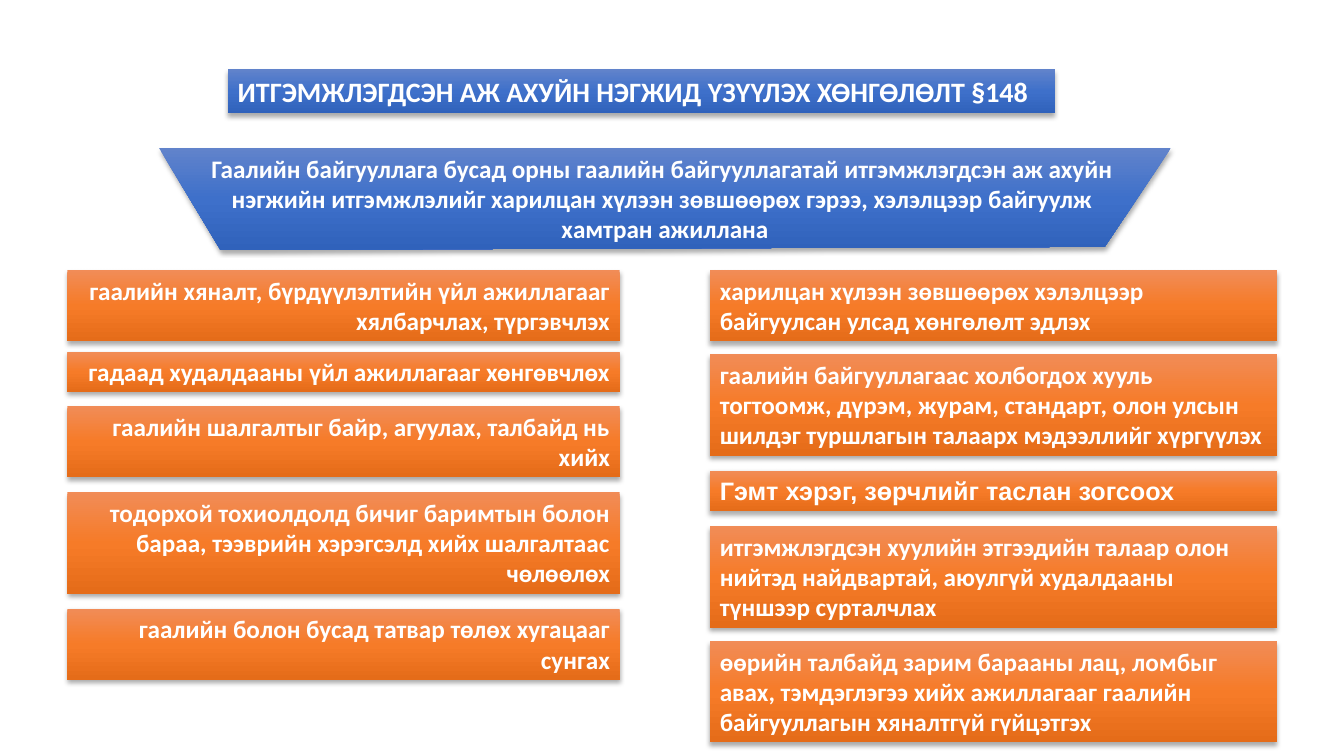
from copy import deepcopy

from lxml import etree
from pptx import Presentation
from pptx.dml.color import RGBColor
from pptx.enum.shapes import MSO_SHAPE
from pptx.enum.text import MSO_ANCHOR, MSO_AUTO_SIZE, PP_ALIGN
from pptx.oxml.ns import qn
from pptx.util import Cm, Pt

RECT = MSO_SHAPE.RECTANGLE
LEFT, RIGHT, MID = PP_ALIGN.LEFT, PP_ALIGN.RIGHT, PP_ALIGN.CENTER
TOP = MSO_ANCHOR.TOP
GROW = MSO_AUTO_SIZE.SHAPE_TO_FIT_TEXT

COLORS = {
    "blue": ["6183CB", "3E70CA", "3062BB"],
    "orange": ["F18C57", "F67B28", "E56C19"],
    "text": "FFFFFF",
    "shadow": "000000",
}

TITLE = "ИТГЭМЖЛЭГДСЭН АЖ АХУЙН НЭГЖИД ҮЗҮҮЛЭХ ХӨНГӨЛӨЛТ §148"
INTRO = "\n".join([
    "Гаалийн байгууллага бусад орны гаалийн байгууллагатай итгэмжлэгдсэн аж ахуйн ",
    "нэгжийн итгэмжлэлийг харилцан хүлээн зөвшөөрөх гэрээ, хэлэлцээр байгуулж ",
    "хамтран ажиллана",
])
FUNNEL = [(4.01, 3.73), (29.51, 3.73), (27.84, 6.22), (5.56, 6.3)]

# top, line count, font, text
EASE = [
    (6.81, 2, "Calibri", "гаалийн хяналт, бүрдүүлэлтийн үйл ажиллагааг хялбарчлах, түргэвчлэх"),
    (8.86, 1, "Calibri", "гадаад худалдааны үйл ажиллагааг хөнгөвчлөх"),
    (10.24, 2, "Calibri", "гаалийн шалгалтыг байр, агуулах, талбайд нь хийх"),
    (12.4, 3, "Calibri", "тодорхой тохиолдолд бичиг баримтын болон бараа, тээврийн "
     "хэрэгсэлд хийх шалгалтаас чөлөөлөх"),
    (15.34, 2, "Calibri", "гаалийн болон бусад татвар төлөх хугацааг сунгах"),
]
GAIN = [
    (6.81, 2, "Calibri", "харилцан хүлээн зөвшөөрөх хэлэлцээр байгуулсан улсад хөнгөлөлт эдлэх"),
    (8.92, 3, "Calibri", "гаалийн байгууллагаас холбогдох хууль тогтоомж, дүрэм, журам, "
     "стандарт, олон улсын шилдэг туршлагын талаарх мэдээллийг хүргүүлэх"),
    (11.86, 1, "Arial", "Гэмт хэрэг, зөрчлийг таслан зогсоох"),
    (13.26, 3, "Calibri", "итгэмжлэгдсэн хуулийн этгээдийн талаар олон нийтэд найдвартай, "
     "аюулгүй худалдааны түншээр сурталчлах"),
    (16.15, 3, "Calibri", "өөрийн талбайд зарим барааны лац, ломбыг авах, тэмдэглэгээ хийх "
     "ажиллагааг гаалийн байгууллагын хяналтгүй гүйцэтгэх"),
]


def paint(shape, tone):
    fill = shape.fill
    fill.gradient()
    fill.gradient_angle = 270
    stops = shape.element.spPr.find(".//" + qn("a:gsLst"))
    stops.append(deepcopy(stops[0]))
    for i, stop in enumerate(fill.gradient_stops):
        stop.position = i / 2
        stop.color.rgb = RGBColor.from_string(COLORS[tone][i])
    shape.line.fill.background()


def shade(shape):
    shape.shadow.inherit = False
    effects = shape.element.spPr.find(qn("a:effectLst"))
    outer = etree.SubElement(effects, qn("a:outerShdw"), blurRad=str(Pt(3.5)),
                             dist=str(Pt(2.2)), dir="5400000", rotWithShape="0")
    color = etree.SubElement(outer, qn("a:srgbClr"), val=COLORS["shadow"])
    etree.SubElement(color, qn("a:alpha"), val="32000")


def write(shape, text, align, size=18, font="Calibri"):
    frame = shape.text_frame
    frame.text = text
    frame.word_wrap = True
    frame.auto_size = GROW
    frame.vertical_anchor = TOP
    for para in frame.paragraphs:
        para.alignment = align
        for run in para.runs:
            run.font.size = Pt(size)
            run.font.name = font
            run.font.bold = True
            run.font.color.rgb = RGBColor.from_string(COLORS["text"])


def box(slide, x, y, w, h, tone):
    shape = slide.shapes.add_shape(RECT, Cm(x), Cm(y), Cm(w), Cm(h))
    paint(shape, tone)
    shade(shape)
    return shape


def funnel(slide, points, text):
    start, *rest = [(Cm(x), Cm(y)) for x, y in points]
    path = slide.shapes.build_freeform(*start)
    path.add_line_segments(rest, close=True)
    shape = path.convert_to_shape()
    paint(shape, "blue")
    shade(shape)
    write(shape, text, MID)


def column(slide, x, w, items, align):
    for y, lines, font, text in items:
        shape = box(slide, x, y, w, 0.25 + 0.77 * lines, "orange")
        write(shape, text, align, font=font)


def main():
    deck = Presentation()
    deck.slide_width, deck.slide_height = Cm(33.87), Cm(19.05)
    slide = deck.slides.add_slide(deck.slide_layouts[6])
    write(box(slide, 5.74, 1.75, 20.85, 1.11, "blue"), TITLE, LEFT, size=20)
    column(slide, 1.7, 13.92, EASE, RIGHT)
    column(slide, 17.89, 14.29, GAIN, LEFT)
    funnel(slide, FUNNEL, INTRO)
    deck.save("out.pptx")


if __name__ == "__main__":
    main()
